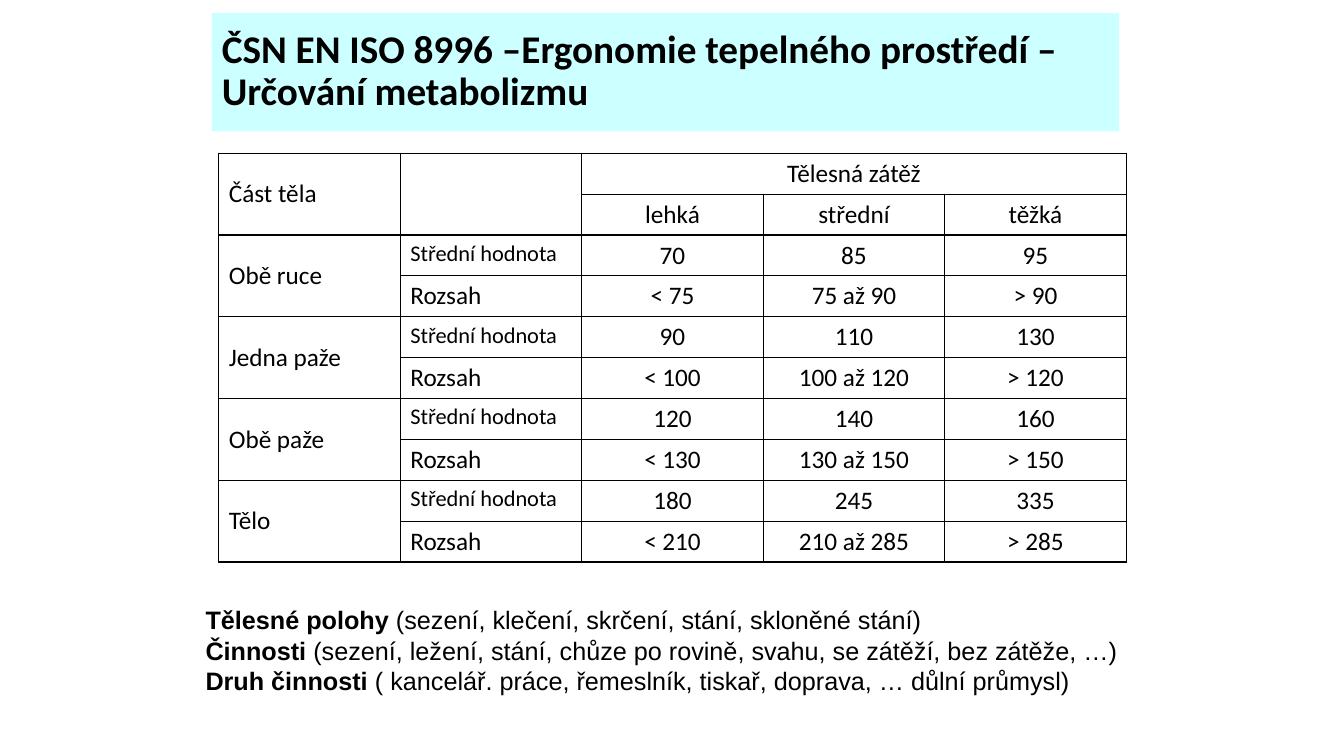
from lxml import etree
from pptx import Presentation
from pptx.dml.color import RGBColor
from pptx.enum.text import MSO_ANCHOR, MSO_AUTO_SIZE, PP_ALIGN
from pptx.oxml.ns import qn
from pptx.util import Inches, Pt

BLACK = RGBColor(0, 0, 0)
WHITE = RGBColor(255, 255, 255)
PALE_CYAN = RGBColor(204, 255, 255)
LEFT, CENTER = PP_ALIGN.LEFT, PP_ALIGN.CENTER
TOP, MIDDLE = MSO_ANCHOR.TOP, MSO_ANCHOR.MIDDLE
FIT_SHAPE, NO_FIT = MSO_AUTO_SIZE.SHAPE_TO_FIT_TEXT, MSO_AUTO_SIZE.NONE
TITLE_ONLY = 5

TITLE = "ČSN EN ISO 8996 –Ergonomie tepelného prostředí – Určování metabolizmu"
LOADS = ["lehká", "střední", "těžká"]
BODY_PARTS = [
    ("Obě ruce", ["70", "85", "95"], ["< 75", "75 až 90", "> 90"]),
    ("Jedna paže", ["90", "110", "130"], ["< 100", "100 až 120", "> 120"]),
    ("Obě paže", ["120", "140", "160"], ["< 130", "130 až 150", "> 150"]),
    ("Tělo", ["180", "245", "335"], ["< 210", "210 až 285", "> 285"]),
]
NOTES = [
    ("Tělesné polohy ", "(sezení, klečení, skrčení, stání, skloněné stání)"),
    ("Činnosti ", "(sezení, ležení, stání, chůze po rovině, svahu, se zátěží, bez zátěže, …)"),
    ("Druh činnosti ", "( kancelář. práce, řemeslník, tiskař, doprava, … důlní průmysl)"),
]


class SlideBuilder:
    def __init__(self, slide, heading_font, note_font):
        self.slide = slide
        self.heading_font = heading_font
        self.note_font = note_font

    def apply(self, target, values):
        for name, value in values.items():
            setattr(target, name, value)

    def format_font(self, font, name, size, bold=False):
        self.apply(font, {"name": name, "size": Pt(size), "bold": bold})
        font.color.rgb = BLACK

    def place(self, shape, left, top, width, height):
        self.apply(shape, {
            "left": Inches(left), "top": Inches(top),
            "width": Inches(width), "height": Inches(height),
        })

    def title(self, text, box):
        shape = self.slide.shapes.title
        self.place(shape, *box)
        shape.fill.solid()
        shape.fill.fore_color.rgb = PALE_CYAN
        frame = shape.text_frame
        frame.text = text
        self.apply(frame, {"word_wrap": True, "auto_size": NO_FIT, "vertical_anchor": MIDDLE})
        paragraph = frame.paragraphs[0]
        self.apply(paragraph, {"alignment": LEFT, "line_spacing": 0.9})
        self.format_font(paragraph.runs[0].font, self.heading_font, 28, True)

    def borders(self, cell):
        properties = cell._tc.get_or_add_tcPr()
        for index, side in enumerate(("a:lnL", "a:lnR", "a:lnT", "a:lnB")):
            line = etree.Element(qn(side), w=str(Pt(1)))
            fill = etree.SubElement(line, qn("a:solidFill"))
            etree.SubElement(fill, qn("a:srgbClr"), val=str(BLACK))
            properties.insert(index, line)

    def table(self, rows, columns, box):
        table = self.slide.shapes.add_table(rows, columns, *map(Inches, box)).table
        for cell in table.iter_cells():
            cell.fill.solid()
            cell.fill.fore_color.rgb = WHITE
            self.borders(cell)
        return table

    def cell(self, table, row, column, text, alignment=LEFT, anchor=TOP, size=18):
        cell = table.cell(row, column)
        cell.text = text
        cell.vertical_anchor = anchor
        paragraph = cell.text_frame.paragraphs[0]
        paragraph.alignment = alignment
        self.format_font(paragraph.runs[0].font, self.heading_font, size)

    def merge(self, table, row, column, last_row, last_column):
        table.cell(row, column).merge(table.cell(last_row, last_column))

    def notes(self, lines, box):
        frame = self.slide.shapes.add_textbox(*map(Inches, box)).text_frame
        self.apply(frame, {"word_wrap": True, "auto_size": FIT_SHAPE})
        for index, (term, detail) in enumerate(lines):
            paragraph = frame.add_paragraph() if index else frame.paragraphs[0]
            for text, bold in ((term, True), (detail, False)):
                run = paragraph.add_run()
                run.text = text
                self.format_font(run.font, self.note_font, 18, bold)


def fill_metabolism_table(builder):
    table = builder.table(2 + 2 * len(BODY_PARTS), 2 + len(LOADS), (2.17, 1.52, 9, 4.05))
    builder.merge(table, 0, 0, 1, 0)
    builder.merge(table, 0, 1, 1, 1)
    builder.merge(table, 0, 2, 0, 4)
    builder.cell(table, 0, 0, "Část těla", anchor=MIDDLE)
    builder.cell(table, 0, 2, "Tělesná zátěž", CENTER, MIDDLE)
    for column, load in enumerate(LOADS, 2):
        builder.cell(table, 1, column, load, CENTER, MIDDLE)
    for index, (part, means, ranges) in enumerate(BODY_PARTS):
        row = 2 + 2 * index
        builder.merge(table, row, 0, row + 1, 0)
        builder.cell(table, row, 0, part, anchor=MIDDLE)
        builder.cell(table, row, 1, "Střední hodnota", size=16)
        builder.cell(table, row + 1, 1, "Rozsah")
        for column, (mean, interval) in enumerate(zip(means, ranges), 2):
            builder.cell(table, row, column, mean, CENTER)
            builder.cell(table, row + 1, column, interval, CENTER)


def main():
    presentation = Presentation()
    presentation.slide_width = Inches(13.33)
    presentation.slide_height = Inches(7.5)
    slide = presentation.slides.add_slide(presentation.slide_layouts[TITLE_ONLY])
    builder = SlideBuilder(slide, "Calibri", "Arial")
    builder.title(TITLE, (2.1, 0.13, 9, 1.17))
    fill_metabolism_table(builder)
    builder.notes(NOTES, (1.94, 5.95, 9.53, 1.01))
    presentation.save("out.pptx")


if __name__ == "__main__":
    main()
